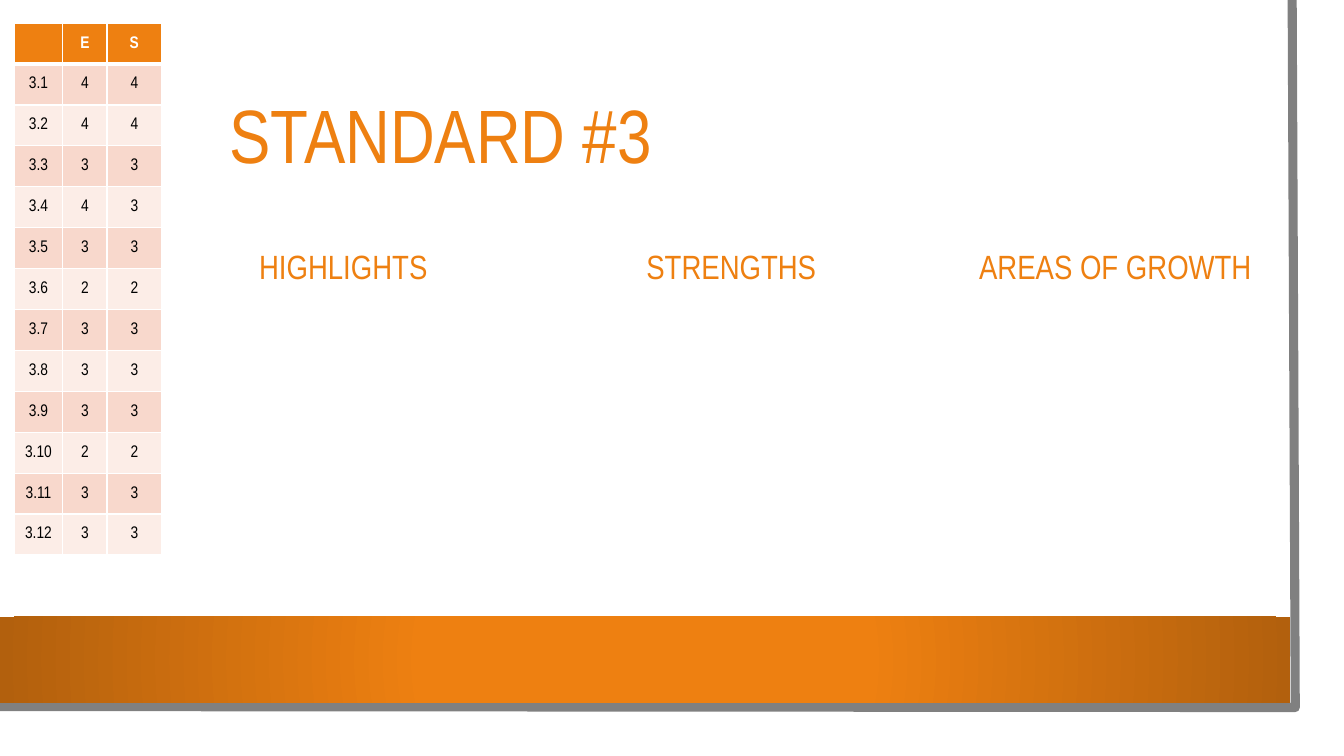
import pptx
import pptx.dml.color
import pptx.enum.shapes
import pptx.enum.text
import pptx.oxml
import pptx.oxml.ns
import pptx.util

Pt = pptx.util.Pt
ALIGN = pptx.enum.text.PP_ALIGN
ANCHOR = pptx.enum.text.MSO_ANCHOR

FONT = "Arial Narrow"
ORANGE = "EE8011"
DARK_ORANGE = "B2600D"
GRAY = "808080"
WHITE = "FFFFFF"
BLACK = "000000"
BANDS = ["F8D8CC", "FCEDE7"]

HEADINGS = [("HIGHLIGHTS", 115.2), ("STRENGTHS", 392.4), ("AREAS OF GROWTH", 666.7)]
E_SCORES = [4, 4, 3, 4, 3, 2, 3, 3, 3, 2, 3, 3]
S_SCORES = [4, 4, 3, 3, 3, 2, 3, 3, 3, 2, 3, 3]
COLUMN_WIDTHS = [34.8, 31.5, 39.2]
HEADER_HEIGHT = 28.8
ROW_HEIGHT = 29.25


def color(hex_string):
    return pptx.dml.color.RGBColor.from_string(hex_string)


def write_text(frame, text, size, hex_color, bold=False, align=ALIGN.CENTER, line_spacing=1.0):
    paragraph = frame.paragraphs[0]
    paragraph.alignment = align
    paragraph.line_spacing = line_spacing
    run = paragraph.add_run()
    run.text = text
    run.font.name = FONT
    run.font.size = Pt(size)
    run.font.bold = bold
    run.font.color.rgb = color(hex_color)


def add_text(slide, text, left, top, width, height, size, anchor, align=ALIGN.CENTER):
    box = slide.shapes.add_textbox(Pt(left), Pt(top), Pt(width), Pt(height))
    frame = box.text_frame
    frame.word_wrap = True
    frame.vertical_anchor = anchor
    write_text(frame, text, size, ORANGE, align=align, line_spacing=0.9)


def add_frame_line(slide):
    builder = slide.shapes.build_freeform(Pt(923), Pt(0), scale=1.0)
    builder.add_line_segments([(Pt(925.2), Pt(505.4)), (Pt(0), Pt(504.7))], close=False)
    shape = builder.convert_to_shape()
    shape.shadow.inherit = False
    shape.fill.background()
    shape.line.color.rgb = color(GRAY)
    shape.line.width = Pt(6.5)


def add_gradient_band(slide):
    shape = slide.shapes.add_shape(
        pptx.enum.shapes.MSO_SHAPE.RECTANGLE, Pt(0), Pt(440.6), Pt(921.6), Pt(61.4))
    shape.shadow.inherit = False
    shape.line.fill.background()
    shape.fill.gradient()
    stops = [(0.34, ORANGE), (1.0, DARK_ORANGE)]
    for stop, (position, hex_color) in zip(shape.fill.gradient_stops, stops):
        stop.position = position
        stop.color.rgb = color(hex_color)
    linear = shape._element.spPr.find(".//" + pptx.oxml.ns.qn("a:lin"))
    radial = pptx.oxml.parse_xml(
        f'<a:path {pptx.oxml.ns.nsdecls("a")} path="circle">'
        '<a:fillToRect l="50000" t="50000" r="50000" b="50000"/></a:path>')
    linear.getparent().replace(linear, radial)


def set_borders(cell, top, bottom):
    """Draw white borders; top and bottom are widths in points."""
    properties = cell._tc.get_or_add_tcPr()
    for side, width in [("L", 1), ("R", 1), ("T", top), ("B", bottom)]:
        properties.append(pptx.oxml.parse_xml(
            f'<a:ln{side} {pptx.oxml.ns.nsdecls("a")} w="{Pt(width)}">'
            f'<a:solidFill><a:srgbClr val="{WHITE}"/></a:solidFill></a:ln{side}>'))


def add_score_table(slide):
    rows = [["", "E", "S"]]
    for number, scores in enumerate(zip(E_SCORES, S_SCORES), start=1):
        rows.append([f"3.{number}", *map(str, scores)])
    height = HEADER_HEIGHT + ROW_HEIGHT * len(E_SCORES)
    table = slide.shapes.add_table(
        len(rows), len(COLUMN_WIDTHS), Pt(10.1), Pt(16.9), Pt(sum(COLUMN_WIDTHS)), Pt(height)).table
    for column, width in zip(table.columns, COLUMN_WIDTHS):
        column.width = Pt(width)
    for row_index, texts in enumerate(rows):
        header = row_index == 0
        table.rows[row_index].height = Pt(HEADER_HEIGHT if header else ROW_HEIGHT)
        for column_index, text in enumerate(texts):
            cell = table.cell(row_index, column_index)
            set_borders(cell, top=3 if row_index == 1 else 1, bottom=3 if header else 1)
            cell.fill.solid()
            cell.fill.fore_color.rgb = color(ORANGE if header else BANDS[(row_index - 1) % 2])
            cell.vertical_anchor = ANCHOR.MIDDLE
            cell.margin_left = cell.margin_right = Pt(4)
            write_text(cell.text_frame, text, 12, WHITE if header else BLACK, bold=header)


def main():
    presentation = pptx.Presentation()
    presentation.slide_width = Pt(960)
    presentation.slide_height = Pt(540)
    slide = presentation.slides.add_slide(presentation.slide_layouts[6])
    add_frame_line(slide)
    add_gradient_band(slide)
    add_text(slide, "STANDARD #3", 157, 54, 715, 90.7, 54, ANCHOR.MIDDLE, ALIGN.LEFT)
    for text, left in HEADINGS:
        add_text(slide, text, left, 162.7, 260, 45.4, 24, ANCHOR.BOTTOM)
    add_score_table(slide)
    presentation.save("out.pptx")


if __name__ == "__main__":
    main()
